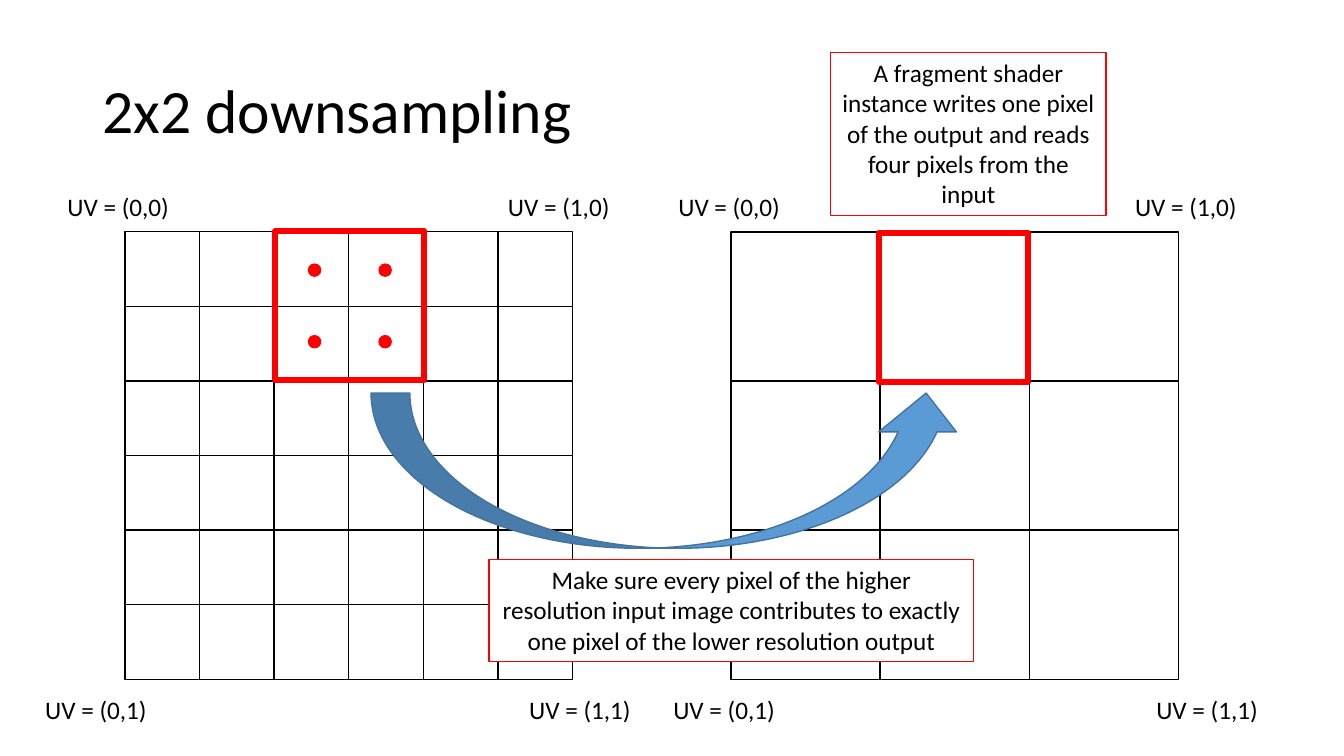
"""Build a slide that explains 2x2 downsampling."""
from itertools import product

from pptx import Presentation
from pptx.dml.color import RGBColor
from pptx.enum.shapes import MSO_SHAPE as Shape
from pptx.enum.text import MSO_ANCHOR as Anchor
from pptx.enum.text import MSO_AUTO_SIZE as AutoSize
from pptx.enum.text import PP_ALIGN as Align
from pptx.util import Emu, Pt

PX = 9144
BLACK = RGBColor(0x00, 0x00, 0x00)
WHITE = RGBColor(0xFF, 0xFF, 0xFF)
RED = RGBColor(0xFF, 0x00, 0x00)
BLUE = RGBColor(0x5B, 0x9B, 0xD5)
DARK_BLUE = RGBColor(0x43, 0x73, 0x9E)

GRID_TOP = 230
INPUT_LEFT, INPUT_CELL = 124, 74
OUTPUT_LEFT, OUTPUT_CELL = 725, 148

UV_LABELS = [
    ("UV = (0,0)", 57, 185),
    ("UV = (1,0)", 494, 185),
    ("UV = (0,1)", 35, 684),
    ("UV = (1,1)", 515, 684),
    ("UV = (0,0)", 663, 185),
    ("UV = (1,0)", 1116, 185),
    ("UV = (0,1)", 658, 684),
    ("UV = (1,1)", 1137, 684),
]


def px(*lengths):
    """Turn lengths in px into EMU."""
    return [Emu(length * PX) for length in lengths]


def apply_format(target, values):
    """Set each named attribute on the target."""
    for name, value in values.items():
        setattr(target, name, value)


def add_figure(shapes, kind, bounds, line, width=1, fill=None):
    """Add a preset shape with an outline and an optional fill."""
    figure = shapes.add_shape(kind, *px(*bounds))
    figure.shadow.inherit = False
    if fill is None:
        figure.fill.background()
    else:
        figure.fill.solid()
        figure.fill.fore_color.rgb = fill
    figure.line.color.rgb = line
    figure.line.width = Pt(width)
    return figure


def write_text(box, text, size=18, align=Align.LEFT, spacing=1.0, **frame_values):
    """Write one paragraph into a box."""
    frame = box.text_frame
    apply_format(frame, {"word_wrap": True, "vertical_anchor": Anchor.TOP, **frame_values})
    para = frame.paragraphs[0]
    apply_format(para, {"alignment": align, "line_spacing": spacing})
    span = para.add_run()
    span.text = text
    apply_format(span.font, {"name": "Calibri", "size": Pt(size)})
    span.font.color.rgb = BLACK


def add_title(page, text):
    """Add the slide heading."""
    box = page.shapes.add_textbox(*px(92, 40, 1150, 145))
    write_text(box, text, 44, spacing=0.9, vertical_anchor=Anchor.MIDDLE)


def add_grid(page, left, cell, count):
    """Add a grouped square grid of pixels."""
    group = page.shapes.add_group_shape()
    for row, column in product(range(count), repeat=2):
        bounds = (left + column * cell, GRID_TOP + row * cell, cell, cell)
        add_figure(group.shapes, Shape.RECTANGLE, bounds, BLACK)


def add_highlight(page, left, top):
    """Outline the area of one output pixel."""
    bounds = (left, top, OUTPUT_CELL, OUTPUT_CELL)
    add_figure(page.shapes, Shape.RECTANGLE, bounds, RED, 4.25)


def add_arrow(page, bounds):
    """Add the upward curved arrow from input to output."""
    arrow = add_figure(page.shapes, Shape.CURVED_DOWN_ARROW, bounds, DARK_BLUE, 1, BLUE)
    arrow.element.spPr.xfrm.set("flipV", "1")


def add_callout(page, text, bounds):
    """Add a red-framed explanation."""
    box = add_figure(page.shapes, Shape.RECTANGLE, bounds, RED, 0.75, WHITE)
    write_text(box, text, align=Align.CENTER, auto_size=AutoSize.SHAPE_TO_FIT_TEXT)


def add_label(page, text, left, top):
    """Add a corner coordinate."""
    box = page.shapes.add_textbox(*px(left, top, 126, 40))
    write_text(box, text, auto_size=AutoSize.SHAPE_TO_FIT_TEXT)


def add_samples(page):
    """Mark the four input pixels that are read."""
    for top, left in product((262, 333), (306, 376)):
        add_figure(page.shapes, Shape.OVAL, (left, top, 12, 12), RED, 1, RED)


def main():
    """Build and save the deck."""
    deck = Presentation()
    deck.slide_width, deck.slide_height = px(1333, 750)
    page = deck.slides.add_slide(deck.slide_layouts[6])
    add_title(page, "2x2 downsampling")
    add_grid(page, INPUT_LEFT, INPUT_CELL, 6)
    add_grid(page, OUTPUT_LEFT, OUTPUT_CELL, 3)
    add_highlight(page, 273, 229)
    add_highlight(page, 872, 231)
    add_arrow(page, (368, 390, 589, 154))
    add_callout(
        page,
        "Make sure every pixel of the higher resolution input image "
        "contributes to exactly one pixel of the lower resolution output",
        (485, 555, 481, 101),
    )
    for text, left, top in UV_LABELS:
        add_label(page, text, left, top)
    add_samples(page)
    add_callout(
        page,
        "A fragment shader instance writes one pixel of the output "
        "and reads four pixels from the input",
        (824, 52, 273, 162),
    )
    deck.save("out.pptx")


if __name__ == "__main__":
    main()
